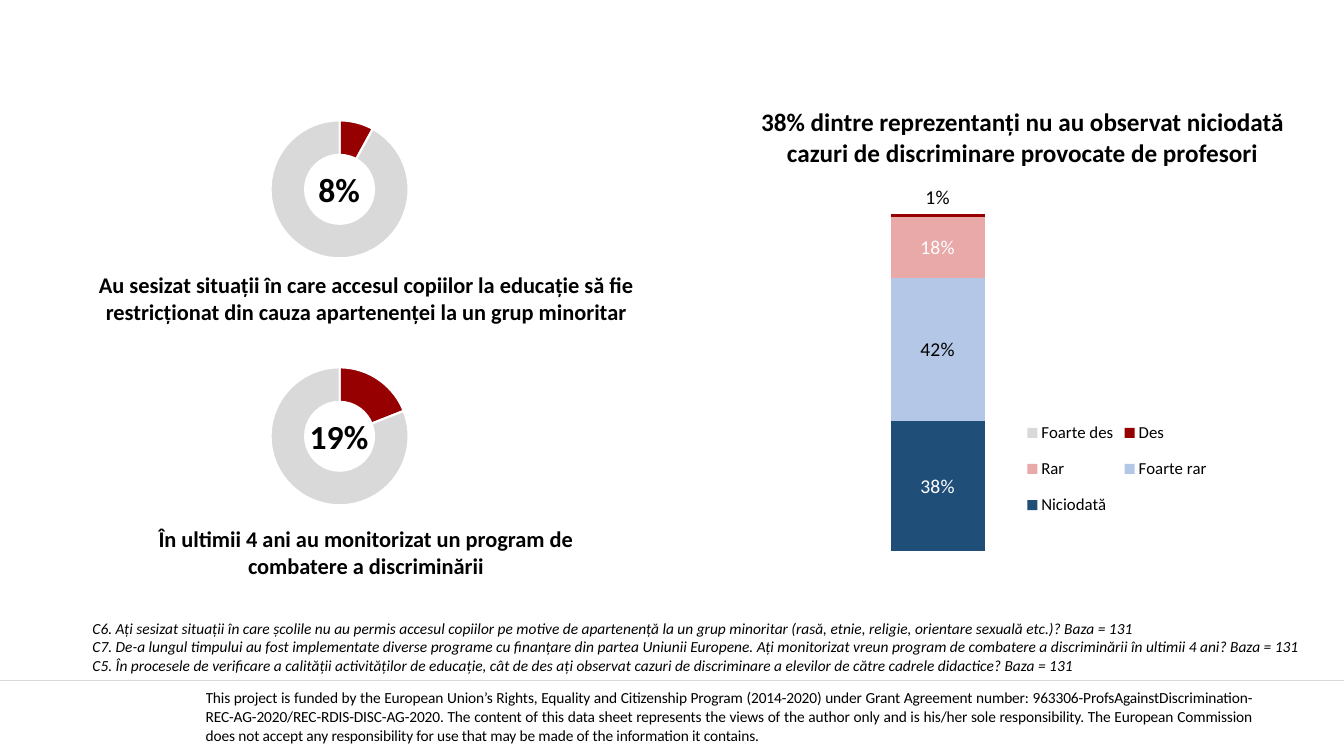
"""Build the slide on observed discrimination in schools."""
from dataclasses import dataclass

from lxml import etree
from pptx import Presentation
from pptx.chart.data import CategoryChartData
from pptx.dml.color import RGBColor
from pptx.enum import chart as ch, shapes, text
from pptx.oxml.ns import qn
from pptx.util import Pt


@dataclass
class Theme:
    face: str = "Calibri"
    black: str = "000000"
    white: str = "FFFFFF"
    red: str = "960000"
    pink: str = "E9A9A9"
    sky: str = "B4C7E7"
    navy: str = "1F4E79"
    grey: str = "D9D9D9"
    note: int = 11
    key: int = 12
    label: int = 14
    body: int = 16
    head: int = 18
    big: int = 24


theme = Theme()
rgb = RGBColor.from_string


def style(font, size, tint=theme.black, bold=None, italic=None):
    font.name, font.size = theme.face, Pt(size)
    font.color.rgb = rgb(tint)
    font.bold, font.italic = bold, italic


def place(node, index, **parts):
    for old in node.findall(qn("c:layout")):
        node.remove(old)
    layout = etree.Element(qn("c:layout"))
    manual = etree.SubElement(layout, qn("c:manualLayout"))
    for tag, val in parts.items():
        etree.SubElement(manual, qn("c:" + tag)).set("val", str(val))
    node.insert(index, layout)


deck = Presentation()
deck.slide_width, deck.slide_height = Pt(960), Pt(540)
slide = deck.slides.add_slide(deck.slide_layouts[6])
left, center = text.PP_ALIGN.LEFT, text.PP_ALIGN.CENTER

table = slide.shapes.add_table(1, 1, Pt(146.9), Pt(474.5), Pt(748), Pt(74.9)).table
table.first_row = table.horz_banding = False
cell = table.cell(0, 0)
cell.fill.background()
cell.margin_left = cell.margin_right = cell.margin_top = cell.margin_bottom = 0
cell.vertical_anchor = text.MSO_ANCHOR.MIDDLE
para = cell.text_frame.paragraphs[0]
para.text = (
    "This project is funded by the European Union’s Rights, Equality and Citizenship Program "
    "(2014-2020) under Grant Agreement number: 963306-ProfsAgainstDiscrimination-"
    "REC-AG-2020/REC-RDIS-DISC-AG-2020. The content of this data sheet represents the views of "
    "the author only and is his/her sole responsibility. The European Commission does not accept "
    "any responsibility for use that may be made of the information it contains.")
para.alignment = text.PP_ALIGN.JUSTIFY
style(para.font, theme.note)
para._p.pPr.find(qn("a:defRPr")).set("spc", "-10")

boxes = [
    (55.4, 190, 412.6, 46, theme.body, center, True, None, [
        "Au sesizat situații în care accesul copiilor la educație să fie "
        "restricționat din cauza apartenenței la un grup minoritar"]),
    (77.8, 371.5, 367.2, 46, theme.body, center, True, None, [
        "În ultimii 4 ani au monitorizat un program de combatere a discriminării"]),
    (519.1, 72.7, 422.6, 51, theme.head, center, True, None, [
        "38% dintre reprezentanți nu au observat niciodată "
        "cazuri de discriminare provocate de profesori"]),
    (59, 438.5, 895, 47.5, theme.note, left, None, True, [
        "C6. Ați sesizat situații în care școlile nu au permis accesul copiilor pe motive de "
        "apartenență la un grup minoritar (rasă, etnie, religie, orientare sexuală etc.)? "
        "Baza = 131",
        "C7. De-a lungul timpului au fost implementate diverse programe cu finanțare din partea "
        "Uniunii Europene. Ați monitorizat vreun program de combatere a discriminării în "
        "ultimii 4 ani? Baza = 131",
        "C5. În procesele de verificare a calității activităților de educație, cât de des ați "
        "observat cazuri de discriminare a elevilor de către cadrele didactice? Baza = 131"]),
]

for share, top, wide in ((8, 75.6, 44.6), (19, 252, 56.9)):
    data = CategoryChartData()
    data.categories = ["1", "2"]
    data.add_series("Series 1", (share, 100 - share))
    ring = slide.shapes.add_chart(
        ch.XL_CHART_TYPE.DOUGHNUT, Pt(141.1), Pt(top), Pt(203), Pt(119.5), data).chart
    ring.has_legend = ring.has_title = False
    style(ring.font, 10)
    plot = ring.plots[0]
    plot._element.find(qn("c:holeSize")).set("val", "56")
    for spot, tint in enumerate((theme.red, theme.grey)):
        form = plot.series[0].points[spot].format
        form.fill.solid()
        form.fill.fore_color.rgb = rgb(tint)
        form.line.color.rgb = rgb(theme.white)
        form.line.width = Pt(1.5)
    place(ring._chartSpace.chart.plotArea, 0, layoutTarget="inner", xMode="edge",
          yMode="edge", x=0.257, y=0.087, w=0.486, h=0.825)
    boxes.append((242.6 - wide / 2, top + 41.6, wide, 36, theme.big, left, True, None,
                  [f"{share}%"]))

data = CategoryChartData(number_format="0%")
data.categories = ["1"]
levels = (
    ("Niciodată", 0.38, theme.navy, theme.white),
    ("Foarte rar", 0.42, theme.sky, theme.black),
    ("Rar", 0.18, theme.pink, theme.white),
    ("Des", 0.01, theme.red, theme.black),
    ("Foarte des", 0, theme.grey, None),
)
for name, value, *tints in levels:
    data.add_series(name, [value])
stack = slide.shapes.add_chart(
    ch.XL_CHART_TYPE.COLUMN_STACKED_100, Pt(535), Pt(118.8), Pt(389.5), Pt(306.7), data).chart
stack.has_title = False
style(stack.font, 10)
stack.category_axis.visible = stack.value_axis.visible = False
stack.value_axis.has_major_gridlines = False
stack.value_axis.minimum_scale, stack.value_axis.maximum_scale = 0, 1
plot = stack.plots[0]
plot.gap_width, plot.overlap, plot.vary_by_categories = 150, 100, False
for series, (name, value, tint, ink) in zip(plot.series, levels):
    series.format.fill.solid()
    series.format.fill.fore_color.rgb = rgb(tint)
    series.invert_if_negative = False
    if ink:
        labels = series.data_labels
        labels.show_value = True
        labels.number_format, labels.number_format_is_linked = "0%", False
        labels.position = ch.XL_LABEL_POSITION.CENTER
        style(labels.font, theme.label, ink)
    if name == "Des":
        label = series.points[0].data_label
        label.position = ch.XL_LABEL_POSITION.CENTER
        style(label.font, theme.label, ink)
        place(labels._element.find(qn("c:dLbl")), 1, x=0, y=-0.04)
place(stack._chartSpace.chart.plotArea, 0, layoutTarget="inner", xMode="edge",
      yMode="edge", x=0.131, y=0.11, w=0.43, h=0.786)
stack.has_legend = True
stack.legend.position = ch.XL_LEGEND_POSITION.RIGHT
stack.legend.include_in_layout = False
style(stack.legend.font, theme.key)
place(stack.legend._element, 1, xMode="edge", yMode="edge", x=0.5, y=0.56, w=0.35, h=0.29)

for x, y, wide, high, size, align, bold, italic, lines in boxes:
    frame = slide.shapes.add_textbox(Pt(x), Pt(y), Pt(wide), Pt(high)).text_frame
    frame.word_wrap = size != theme.big
    frame.auto_size = text.MSO_AUTO_SIZE.SHAPE_TO_FIT_TEXT
    frame.text = "\n".join(lines)
    for para in frame.paragraphs:
        para.alignment = align
        style(para.font, size, bold=bold, italic=italic)

rule = slide.shapes.add_connector(shapes.MSO_CONNECTOR.STRAIGHT, 0, Pt(486), Pt(960), Pt(486))
rule.line.color.rgb = rgb(theme.grey)
rule.line.width = Pt(0.5)
etree.SubElement(rule._element.spPr, qn("a:effectLst"))

deck.save("out.pptx")
